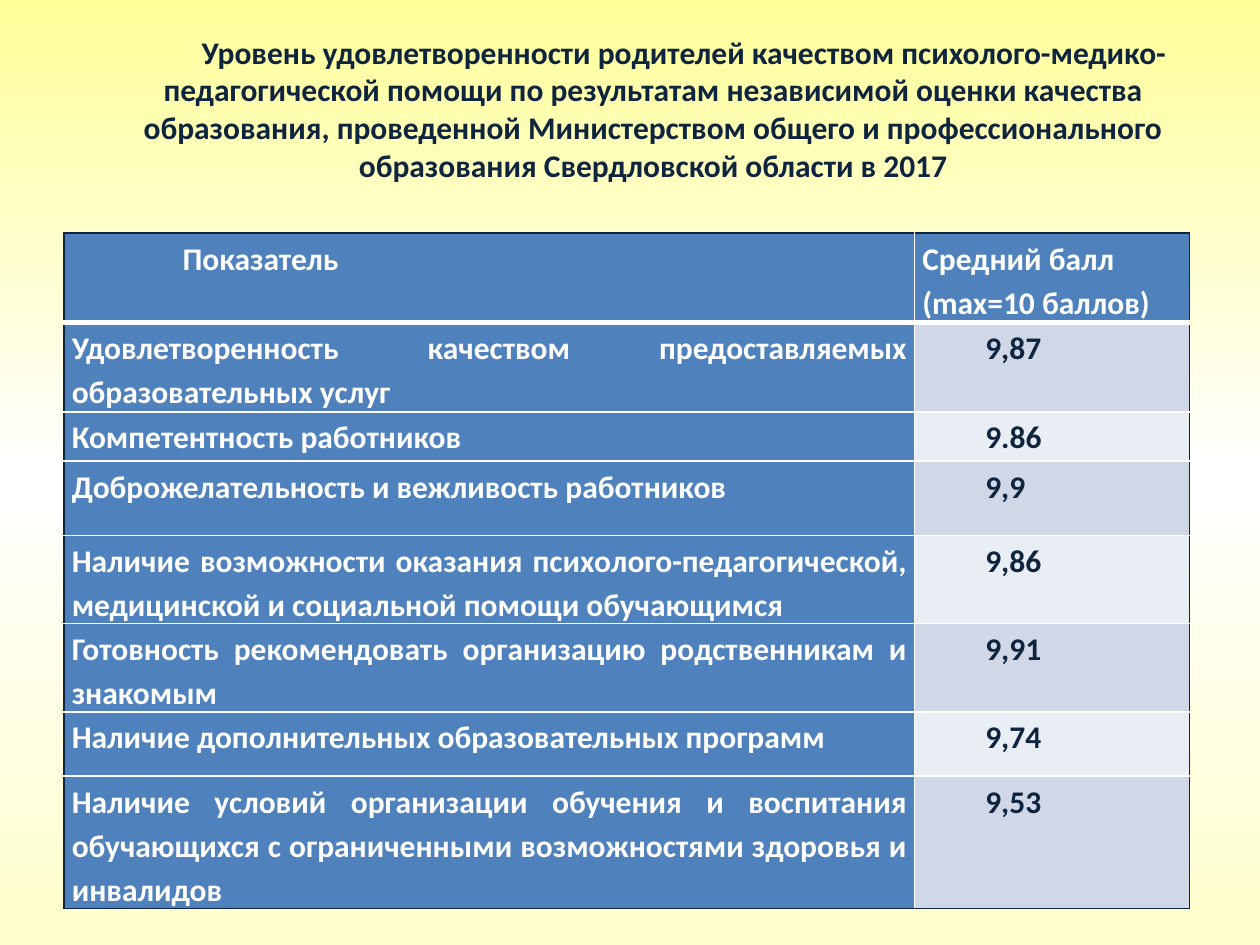
import pptx
import pptx.util
import pptx.dml.color
import pptx.enum.text
import pptx.oxml
import pptx.oxml.ns
import pptx.oxml.xmlchemy
import lxml.etree

Inches = pptx.util.Inches
Pt = pptx.util.Pt
ALIGN = pptx.enum.text.PP_ALIGN
qn = pptx.oxml.ns.qn

COLORS = {
    "dark": "0F243E",
    "white": "FFFFFF",
    "blue": "4F81BD",
    "band_dark": "D0D8E8",
    "band_light": "E9EDF4",
    "top": "FFFF99",
    "bottom": "FFFFCC",
}
TITLE = (
    "Уровень удовлетворенности родителей качеством психолого-медико-педагогической "
    "помощи по результатам независимой оценки качества образования, проведенной "
    "Министерством общего и профессионального образования Свердловской области в 2017"
)
HEADER = ("Показатель", "Средний балл (max=10 баллов)")
SCORES = [
    ("Удовлетворенность качеством предоставляемых образовательных услуг", "9,87"),
    ("Компетентность работников", "9.86"),
    ("Доброжелательность и вежливость работников", "9,9"),
    ("Наличие возможности оказания психолого-педагогической, медицинской "
     "и социальной помощи обучающимся", "9,86"),
    ("Готовность рекомендовать организацию родственникам и знакомым", "9,91"),
    ("Наличие дополнительных образовательных программ", "9,74"),
    ("Наличие условий организации обучения и воспитания обучающихся "
     "с ограниченными возможностями здоровья и инвалидов", "9,53"),
]
COLUMN_WIDTHS = (6.75, 2.18)
ROW_HEIGHTS = (0.71, 0.71, 0.39, 0.59, 0.7, 0.7, 0.51, 1.05)


def rgb(name):
    return pptx.dml.color.RGBColor.from_string(COLORS[name])


def add_color(parent, name):
    lxml.etree.SubElement(parent, qn("a:srgbClr"), val=COLORS[name])


def paint_background(page):
    fill = page.background.fill
    fill.gradient()
    fill.gradient_angle = 270
    stops = page.element.find(".//" + qn("a:gsLst"))
    for stop in list(stops):
        stops.remove(stop)
    for position, name in ((0, "top"), (50, "white"), (100, "bottom")):
        stop = lxml.etree.SubElement(stops, qn("a:gs"), pos=str(position * 1000))
        add_color(stop, name)


def write_text(para, text, color, align):
    para.alignment = align
    span = para.add_run()
    span.text = text
    span.font.name = "Calibri"
    span.font.size = Pt(18)
    span.font.bold = True
    span.font.color.rgb = rgb(color)


def indent(para, left=0, first=0):
    properties = para._p.get_or_add_pPr()
    properties.set("marL", str(Inches(left)))
    properties.set("indent", str(Inches(first)))


def add_title(page):
    box = page.shapes.add_textbox(Inches(0.72), Inches(0.21), Inches(8.93), Inches(1.62))
    box.text_frame.word_wrap = True
    para = box.text_frame.paragraphs[0]
    write_text(para, TITLE, "dark", ALIGN.CENTER)
    indent(para, first=0.49)


def add_border(cell, side, color, width):
    properties = cell._tc.get_or_add_tcPr()
    line = lxml.etree.SubElement(properties, qn("a:ln" + side), w=str(Pt(width)))
    add_color(lxml.etree.SubElement(line, qn("a:solidFill")), color)


def outline_cell(cell, row, column):
    last_row, last_column = len(SCORES), len(COLUMN_WIDTHS) - 1
    add_border(cell, "L", "dark" if column == 0 else "white", 1)
    add_border(cell, "R", "dark" if column == last_column else "white", 1)
    add_border(cell, "T", "dark" if row == 0 else "white", 3 if row == 1 else 1)
    add_border(cell, "B", "dark" if row == last_row else "white", 3 if row == 0 else 1)


def fill_cell(cell, row, column, text):
    is_score = row > 0 and column == 1
    outline_cell(cell, row, column)
    cell.margin_left = cell.margin_right = Inches(0.06)
    cell.margin_top, cell.margin_bottom = Inches(0.01), 0
    band = "band_dark" if row % 2 else "band_light"
    cell.fill.solid()
    cell.fill.fore_color.rgb = rgb(band if is_score else "blue")
    para = cell.text_frame.paragraphs[0]
    align = ALIGN.LEFT if row == 0 else ALIGN.JUSTIFY
    write_text(para, text, "dark" if is_score else "white", align)
    para.line_spacing = 1.15
    if column == 1:
        para.space_before = Pt(6)
    if is_score:
        indent(para, left=0.5)
    elif row == 0 and column == 0:
        indent(para, left=0.88)


def add_score_table(page):
    frame = page.shapes.add_table(
        len(ROW_HEIGHTS), len(COLUMN_WIDTHS),
        Inches(0.51), Inches(1.85), Inches(sum(COLUMN_WIDTHS)), Inches(sum(ROW_HEIGHTS)))
    table = frame.table
    table.horz_banding = False
    for column, width in zip(table.columns, COLUMN_WIDTHS):
        column.width = Inches(width)
    for row, height in zip(table.rows, ROW_HEIGHTS):
        row.height = Inches(height)
    for row, texts in enumerate([HEADER] + SCORES):
        for column, text in enumerate(texts):
            fill_cell(table.cell(row, column), row, column, text)


def main():
    deck = pptx.Presentation()
    deck.slide_width, deck.slide_height = Inches(10), Inches(7.5)
    page = deck.slides.add_slide(deck.slide_layouts[6])
    paint_background(page)
    add_title(page)
    add_score_table(page)
    deck.save("out.pptx")


if __name__ == "__main__":
    main()
